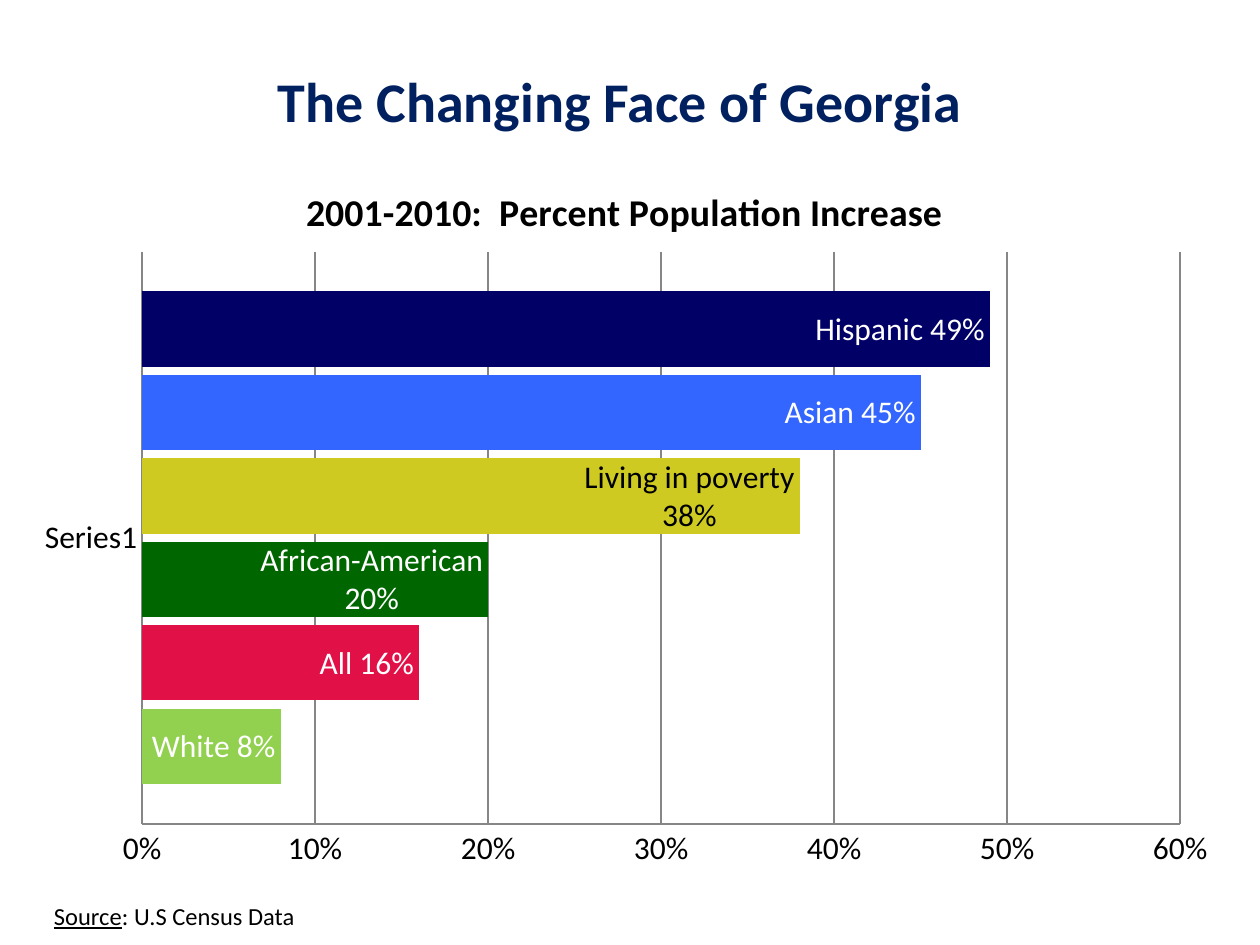
from lxml.etree import SubElement
from pptx import Presentation
from pptx.chart.data import CategoryChartData
from pptx.dml.color import RGBColor
from pptx.enum.chart import XL_CHART_TYPE, XL_LABEL_POSITION, XL_TICK_MARK
from pptx.enum.text import MSO_ANCHOR, PP_ALIGN
from pptx.oxml.ns import qn
from pptx.util import Inches, Pt

TITLE = "The Changing Face of Georgia"
CHART_TITLE = "2001-2010:  Percent Population Increase"
CATEGORY = "Series1"
SOURCE = [("Source", True), (": U.S Census Data", False)]
# series name, value, bar colour, label colour, custom label (None: name and value)
GROUPS = [
    ("White", 0.08, "92D050", "FFFFFF", None),
    ("Series 2", 0.16, "E11148", "FFFFFF", "All 16%"),
    ("Series 3", 0.20, "006600", "FFFFFF", "African-American 20%"),
    ("Series 4", 0.38, "CECA22", "000000", "Living in poverty 38%"),
    ("Asian", 0.45, "3366FF", "FFFFFF", None),
    ("Hispanic", 0.49, "000066", "FFFFFF", None),
]
PLOT_AREA = {"x": 0.1, "y": 0.13, "w": 0.86, "h": 0.79}
GRID_COLOR = "868686"


def color(value):
    return RGBColor.from_string(value)


def style(font, size, hex_color, bold=False):
    font.name = "Calibri"
    font.size = Pt(size)
    font.bold = bold
    font.color.rgb = color(hex_color)


def add_run(paragraph, text, size, hex_color, bold=False):
    run = paragraph.add_run()
    run.text = text
    style(run.font, size, hex_color, bold)
    return run


def set_plot_area(chart):
    """Fix the inner plot area as fractions of the chart."""
    plot_area = chart._chartSpace.chart.plotArea
    layout = plot_area.find(qn("c:layout"))
    if layout is None:
        layout = SubElement(plot_area, qn("c:layout"))
        plot_area.insert(0, layout)
    manual = SubElement(layout, qn("c:manualLayout"))
    settings = {"layoutTarget": "inner", "xMode": "edge", "yMode": "edge", **PLOT_AREA}
    for name, value in settings.items():
        SubElement(manual, qn(f"c:{name}")).set("val", str(value))


def label_series(series, label_color, custom_label):
    labels = series.data_labels
    style(labels.font, 18, label_color)
    labels.number_format = "0%"
    labels.number_format_is_linked = False
    labels.position = XL_LABEL_POSITION.INSIDE_END
    labels.show_value = True
    labels.show_series_name = True
    separator = SubElement(labels._element, qn("c:separator"))
    separator.text = " "
    labels._element.find(qn("c:showBubbleSize")).addnext(separator)
    if custom_label:
        label = series.points[0].data_label
        add_run(label.text_frame.paragraphs[0], custom_label, 18, label_color)
        label.position = XL_LABEL_POSITION.INSIDE_END


def add_population_chart(slide):
    data = CategoryChartData(number_format="0%")
    data.categories = [CATEGORY]
    for name, value, *_ in GROUPS:
        data.add_series(name, [value])
    chart = slide.shapes.add_chart(
        XL_CHART_TYPE.BAR_CLUSTERED,
        Inches(0.17), Inches(1.25), Inches(9.58), Inches(5.75), data).chart
    style(chart.font, 18, "000000")
    chart.has_legend = False
    chart.has_title = True
    add_run(chart.chart_title.text_frame.paragraphs[0], CHART_TITLE, 21.6, "000000", True)
    chart.chart_title.include_in_layout = False

    plot = chart.plots[0]
    plot.gap_width = 106
    plot.overlap = -11
    plot.vary_by_categories = False
    for series, (_, _, fill, label_color, custom_label) in zip(plot.series, GROUPS):
        series.format.fill.solid()
        series.format.fill.fore_color.rgb = color(fill)
        label_series(series, label_color, custom_label)

    value_axis = chart.value_axis
    value_axis.minimum_scale, value_axis.maximum_scale = 0, 0.6
    value_axis.major_unit = 0.1
    value_axis.has_major_gridlines = True
    value_axis.tick_labels.number_format = "0%"
    value_axis.tick_labels.number_format_is_linked = False
    for axis in (chart.category_axis, value_axis):
        axis.major_tick_mark = axis.minor_tick_mark = XL_TICK_MARK.NONE
    for line in (chart.category_axis.format.line, value_axis.format.line,
                 value_axis.major_gridlines.format.line):
        line.color.rgb = color(GRID_COLOR)
        line.width = Pt(0.75)
    set_plot_area(chart)


presentation = Presentation()
presentation.slide_width, presentation.slide_height = Inches(10), Inches(7.5)
slide = presentation.slides.add_slide(presentation.slide_layouts[5])

title = slide.shapes.title
title.left, title.top = Inches(0.42), Inches(0.17)
title.width, title.height = Inches(9), Inches(1.25)
title.text_frame.vertical_anchor = MSO_ANCHOR.MIDDLE
title_paragraph = title.text_frame.paragraphs[0]
title_paragraph.alignment = PP_ALIGN.CENTER
add_run(title_paragraph, TITLE, 32, "002060", True)

add_population_chart(slide)

source_box = slide.shapes.add_textbox(Inches(0.33), Inches(7.1), Inches(2.42), Inches(0.34))
source_box.text_frame.word_wrap = True
for text, underlined in SOURCE:
    run = add_run(source_box.text_frame.paragraphs[0], text, 14, "000000")
    run.font.underline = underlined

presentation.save("out.pptx")
